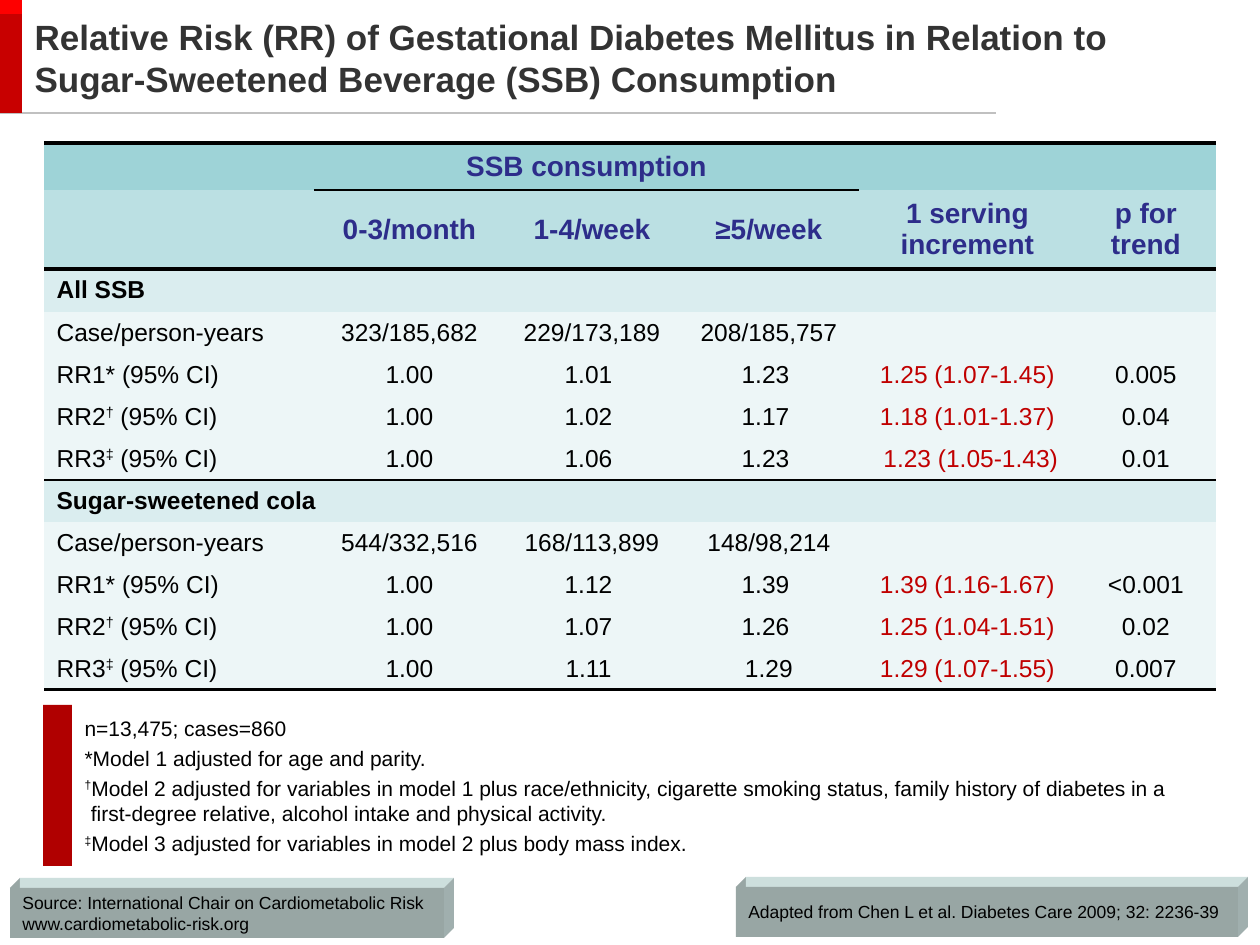
"""Build the slide on sweet drinks and the risk of gestational diabetes."""
from dataclasses import dataclass
from itertools import groupby

from lxml.etree import SubElement
from pptx import Presentation
from pptx.dml.color import RGBColor
from pptx.enum.shapes import MSO_CONNECTOR, MSO_SHAPE
from pptx.enum.text import MSO_ANCHOR, MSO_AUTO_SIZE, PP_ALIGN
from pptx.oxml.ns import qn
from pptx.util import Emu, Pt

HUES = {
    "red": "C80000", "tab": "FE0000", "bar": "B00000", "rule": "C0C0C0",
    "title": "333333", "head": "2D2D8A", "risk": "C00000", "text": "000000",
    "top": "9ED3D7", "sub": "BBE0E3", "group": "DAEDEF", "row": "EDF6F7",
    "front": "98A6A4", "lip": "CDDFDD", "side": "A0AFAE", "white": "FFFFFF",
}


@dataclass(frozen=True)
class Style:
    size: int
    hue: str = "text"
    bold: bool = False
    align: PP_ALIGN = PP_ALIGN.LEFT


@dataclass(frozen=True)
class Box:
    x: int
    y: int
    w: int
    h: int


@dataclass(frozen=True)
class Row:
    kind: str
    high: int
    cells: tuple
    over: float = 0
    under: float = 0


MID = PP_ALIGN.CENTER
HEAD = Style(16, "head", True, MID)
GROUP = Style(14, bold=True)
LABEL = Style(14)
VALUE = Style(14, align=MID)
RISK = Style(14, "risk", align=MID)
NOTE = Style(12)
CREDIT = Style(10)

COLS = (270, 191, 174, 180, 217, 140)
ROWS = (
    Row("top", 47, ("", "SSB consumption", "", "", "", ""), over=2.25),
    Row("sub", 79, ("", "0-3/month", "1-4/week", "≥5/week",
                    "1 serving increment", "p for trend"), under=2.25),
    Row("group", 43, ("All SSB", "", "", "", "", ""), over=2.25),
    Row("row", 42, ("Case/person-years", "323/185,682", "229/173,189",
                    "208/185,757", "", "")),
    Row("row", 42, ("RR1* (95% CI)", "1.00", "1.01 ", "1.23 ",
                    "1.25 (1.07-1.45)", "0.005")),
    Row("row", 42, ("RR2† (95% CI)", "1.00", "1.02 ", "1.17 ",
                    "1.18 (1.01-1.37)", "0.04")),
    Row("row", 42, ("RR3‡ (95% CI)", "1.00", "1.06 ", "1.23 ",
                    " 1.23 (1.05-1.43)", "0.01"), under=1),
    Row("group", 42, ("Sugar-sweetened cola", "", "", "", "", ""), over=1),
    Row("row", 42, ("Case/person-years", "544/332,516", "168/113,899",
                    "148/98,214", "", "")),
    Row("row", 42, ("RR1* (95% CI)", "1.00", "1.12 ", "1.39 ",
                    "1.39 (1.16-1.67)", "<0.001")),
    Row("row", 42, ("RR2† (95% CI)", "1.00", "1.07 ", "1.26 ",
                    "1.25 (1.04-1.51)", "0.02")),
    Row("row", 42, ("RR3‡ (95% CI)", "1.00", "1.11 ", "1.29",
                    "1.29 (1.07-1.55)", "0.007"), under=2.25),
)
NOTES = (
    "n=13,475; cases=860",
    "*Model 1 adjusted for age and parity.",
    "†Model 2 adjusted for variables in model 1 plus race/ethnicity, "
    "cigarette smoking status, family history of diabetes in a "
    "first-degree relative, alcohol intake and physical activity.",
    "‡Model 3 adjusted for variables in model 2 plus body mass index.",
)


def px(n: int) -> Emu:
    return Emu(round(n * 914400 / 126))


def hue(name: str) -> RGBColor:
    return RGBColor.from_string(HUES[name])


def paint(shape, name: str) -> None:
    shape.shadow.inherit = False
    shape.fill.solid()
    shape.fill.fore_color.rgb = hue(name)
    shape.line.fill.background()


def place(shape, box: Box) -> None:
    shape.left, shape.top = px(box.x), px(box.y)
    shape.width, shape.height = px(box.w), px(box.h)


def block(slide, box: Box, name: str):
    shape = slide.shapes.add_shape(
        MSO_SHAPE.RECTANGLE, px(box.x), px(box.y), px(box.w), px(box.h))
    paint(shape, name)
    return shape


def facet(slide, name: str, *dots: tuple) -> None:
    pen = slide.shapes.build_freeform(*dots[0], scale=914400 / 126)
    pen.add_line_segments(dots[1:], close=True)
    paint(pen.convert_to_shape(), name)


def write(frame, lines: tuple, style: Style, list_like: bool = False) -> None:
    frame.word_wrap = True
    for i, line in enumerate(lines):
        para = frame.paragraphs[0] if i == 0 else frame.add_paragraph()
        para.alignment = style.align
        if list_like:
            props = para._p.get_or_add_pPr()
            props.set("marL", "45720")
            props.set("indent", "-45720")
            SubElement(props, qn("a:buNone"))
            para.space_before = Pt(2.7 if i else 0)
        font = para.font
        font.name, font.size, font.bold = "Arial", Pt(style.size), style.bold
        font.color.rgb = hue(style.hue)
        for mark, part in groupby(line, lambda c: c in "†‡"):
            run = para.add_run()
            run.text = "".join(part)
            if mark:
                run._r.get_or_add_rPr().set("baseline", "30000")


def edge(cell, side: str, width: float) -> None:
    line = SubElement(cell._tc.get_or_add_tcPr(), qn(f"a:{side}"),
                      w=str(Pt(width)))
    if width:
        fill = SubElement(line, qn("a:solidFill"))
        SubElement(fill, qn("a:srgbClr"), val=HUES["text"])
    else:
        SubElement(line, qn("a:noFill"))


def pick(kind: str, col: int) -> Style:
    if kind in ("top", "sub"):
        return HEAD
    if kind == "group":
        return GROUP
    return {0: LABEL, 4: RISK}.get(col, VALUE)


def grid(slide, x: int, y: int) -> None:
    high = sum(row.high for row in ROWS)
    table = slide.shapes.add_table(len(ROWS), len(COLS), px(x), px(y),
                                   px(sum(COLS)), px(high)).table
    table.first_row = table.horz_banding = False
    props = table._tbl.tblPr
    props.remove(props.find(qn("a:tableStyleId")))
    for col, wide in zip(table.columns, COLS):
        col.width = px(wide)
    for r, row in enumerate(ROWS):
        table.rows[r].height = px(row.high)
        for c, text in enumerate(row.cells):
            cell = table.cell(r, c)
            inner = 1 <= c <= 3
            edge(cell, "lnL", 0)
            edge(cell, "lnR", 0)
            edge(cell, "lnT", 1.5 if row.kind == "sub" and inner else row.over)
            edge(cell, "lnB", 1.5 if row.kind == "top" and inner else row.under)
            cell.fill.solid()
            cell.fill.fore_color.rgb = hue(row.kind)
            cell.vertical_anchor = MSO_ANCHOR.MIDDLE
            if not text:
                cell.margin_top = cell.margin_bottom = 0
            write(cell.text_frame, (text,), pick(row.kind, c))
    table.cell(0, 1).merge(table.cell(0, 3))
    table.cell(7, 0).merge(table.cell(7, 1))


def plate(slide, box: Box, lines: tuple, deep: int = 10) -> None:
    x, y, right, foot = box.x, box.y, box.x + box.w, box.y + box.h
    back = y - deep
    facet(slide, "front", (x, y), (x + deep, back), (x + deep, y))
    facet(slide, "lip", (x + deep, back), (right + deep, back),
          (right, y), (x + deep, y))
    facet(slide, "side", (right, y), (right + deep, back),
          (right + deep, foot - deep), (right, foot))
    frame = block(slide, box, "front").text_frame
    frame.vertical_anchor = MSO_ANCHOR.MIDDLE
    write(frame, lines, CREDIT)


def fill(holder, box: Box, lines: tuple, style: Style, list_like: bool) -> None:
    place(holder, box)
    frame = holder.text_frame
    frame.auto_size = MSO_AUTO_SIZE.NONE
    frame.vertical_anchor = MSO_ANCHOR.MIDDLE
    write(frame, lines, style, list_like)


def main() -> None:
    deck = Presentation()
    deck.slide_width, deck.slide_height = px(1260), px(945)
    slide = deck.slides.add_slide(deck.slide_layouts[1])
    rule = slide.shapes.add_connector(
        MSO_CONNECTOR.STRAIGHT, 0, px(113), px(996), px(113))
    rule.line.color.rgb, rule.line.width = hue("rule"), Pt(0.75)
    SubElement(rule._element.spPr, qn("a:effectLst"))
    block(slide, Box(0, 0, 22, 113), "red")
    block(slide, Box(0, 0, 22, 14), "tab")
    fill(slide.shapes.title, Box(22, 0, 1163, 115),
         ("Relative Risk (RR) of Gestational Diabetes Mellitus in Relation to "
          "Sugar-Sweetened Beverage (SSB) Consumption",),
         Style(20, "title", True), False)
    grid(slide, 44, 143)
    notes = slide.placeholders[1]
    fill(notes, Box(72, 705, 1145, 161), NOTES, NOTE, True)
    paint(notes, "white")
    block(slide, Box(43, 705, 29, 161), "bar")
    plate(slide, Box(10, 888, 434, 50),
          ("Source: International Chair on Cardiometabolic Risk",
           "www.cardiometabolic-risk.org"))
    plate(slide, Box(736, 887, 502, 50),
          ("Adapted from Chen L et al. Diabetes Care 2009; 32: 2236-39",))
    deck.save("out.pptx")


if __name__ == "__main__":
    main()
